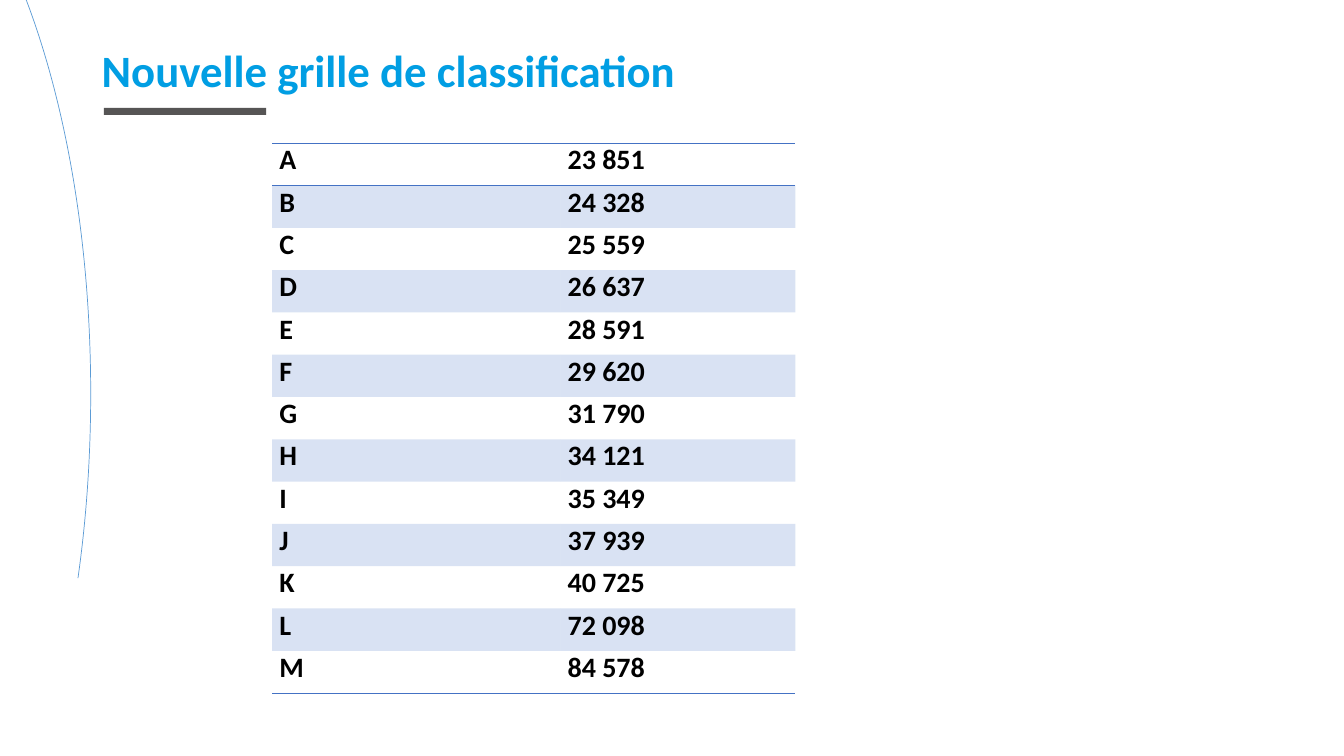
from dataclasses import dataclass

from lxml.etree import SubElement
from pptx import Presentation
from pptx.dml.color import RGBColor
from pptx.enum.shapes import MSO_SHAPE
from pptx.enum.text import PP_ALIGN
from pptx.oxml import parse_xml
from pptx.oxml.ns import nsdecls, qn
from pptx.util import Pt

PX = 9144  # EMU per px, 100 px to the inch


@dataclass(frozen=True)
class Theme:
    font: str = "Calibri"
    title_size: int = 32
    cell_size: int = 20
    title: str = "019EE3"
    text: str = "000000"
    bar: str = "565555"
    arc: str = "5B9BD5"
    table: str = "4472C4"
    band_opacity: int = 20
    plain_table: str = "{2D5ABB26-0587-4C30-8999-92F81FD0307C}"


THEME = Theme()
GRADES = [
    ("A", "23 851"), ("B", "24 328"), ("C", "25 559"), ("D", "26 637"),
    ("E", "28 591"), ("F", "29 620"), ("G", "31 790"), ("H", "34 121"),
    ("I", "35 349"), ("J", "37 939"), ("K", "40 725"), ("L", "72 098"),
    ("M", "84 578"),
]


def emu(*lengths):
    return [length * PX for length in lengths]


def write_text(frame, text, size, color, align=PP_ALIGN.LEFT, spacing=1.0):
    para = frame.paragraphs[0]
    para.alignment = align
    para.line_spacing = spacing
    span = para.add_run()
    span.text = text
    span.font.name = THEME.font
    span.font.size = Pt(size)
    span.font.bold = True
    span.font.color.rgb = RGBColor.from_string(color)


def add_margin_arc(page, left, top, width, height):
    arc = page.shapes.add_shape(MSO_SHAPE.ARC, *emu(left, top, width, height))
    arc.shadow.inherit = False
    arc.fill.background()
    arc.line.color.rgb = RGBColor.from_string(THEME.arc)
    arc.line.width = Pt(0.5)
    for index, degrees in enumerate((178.34, 35.86)):
        arc.adjustments[index] = degrees * 0.6  # 60000 units per degree


def add_heading(page, text, left, top, width, height):
    # Short bar under the title
    bar = page.shapes.add_shape(
        MSO_SHAPE.RECTANGLE, *emu(left + 12, top + height + 2, 161, 7))
    bar.shadow.inherit = False
    bar.fill.solid()
    bar.fill.fore_color.rgb = RGBColor.from_string(THEME.bar)
    bar.line.fill.background()
    # Title
    box = page.shapes.add_textbox(*emu(left, top, width, height))
    box.text_frame.word_wrap = True
    write_text(box.text_frame, text, THEME.title_size, THEME.title, spacing=0.9)


def add_rule(cell, side):
    line = parse_xml(
        f'<a:{side} {nsdecls("a")} w="12700"><a:solidFill>'
        f'<a:srgbClr val="{THEME.table}"/></a:solidFill></a:{side}>')
    properties = cell._tc.get_or_add_tcPr()
    rules = properties.findall(qn("a:lnT"))
    properties.insert(len(rules), line)


def fill_band(cell):
    cell.fill.solid()
    cell.fill.fore_color.rgb = RGBColor.from_string(THEME.table)
    color = cell._tc.tcPr.find(f'{qn("a:solidFill")}/{qn("a:srgbClr")}')
    SubElement(color, qn("a:alpha"), val=str(THEME.band_opacity * 1000))


def add_grade_table(page, rows, left, top, widths, row_height):
    frame = page.shapes.add_table(
        len(rows), len(widths),
        *emu(left, top, sum(widths), row_height * len(rows)))
    table = frame.table
    table.first_row = False
    table.horz_banding = False
    table._tbl.tblPr.find(qn("a:tableStyleId")).text = THEME.plain_table
    for column, width in zip(table.columns, widths):
        column.width = width * PX
    for row_index, values in enumerate(rows):
        table.rows[row_index].height = round(row_height * PX)
        for cell, value in zip(table.rows[row_index].cells, values):
            cell.margin_left = cell.margin_right = 7 * PX
            cell.margin_top = cell.margin_bottom = 0
            write_text(cell.text_frame, value, THEME.cell_size, THEME.text,
                       align=PP_ALIGN.JUSTIFY)
            # Shade every second row, rule the first and last
            if row_index % 2:
                fill_band(cell)
            else:
                cell.fill.background()
            if row_index == 0:
                add_rule(cell, "lnT")
            if row_index in (0, len(rows) - 1):
                add_rule(cell, "lnB")


def build_grid_slide(deck):
    page = deck.slides.add_slide(deck.slide_layouts[6])
    add_margin_arc(page, -442, -210, 532, 1201)
    add_heading(page, "Nouvelle grille de classification", 91, 43, 1152, 62)
    add_grade_table(page, GRADES, 270, 142, (286, 233), 42)


def main():
    deck = Presentation()
    deck.slide_width, deck.slide_height = emu(1333, 750)
    build_grid_slide(deck)
    deck.save("out.pptx")


if __name__ == "__main__":
    main()
